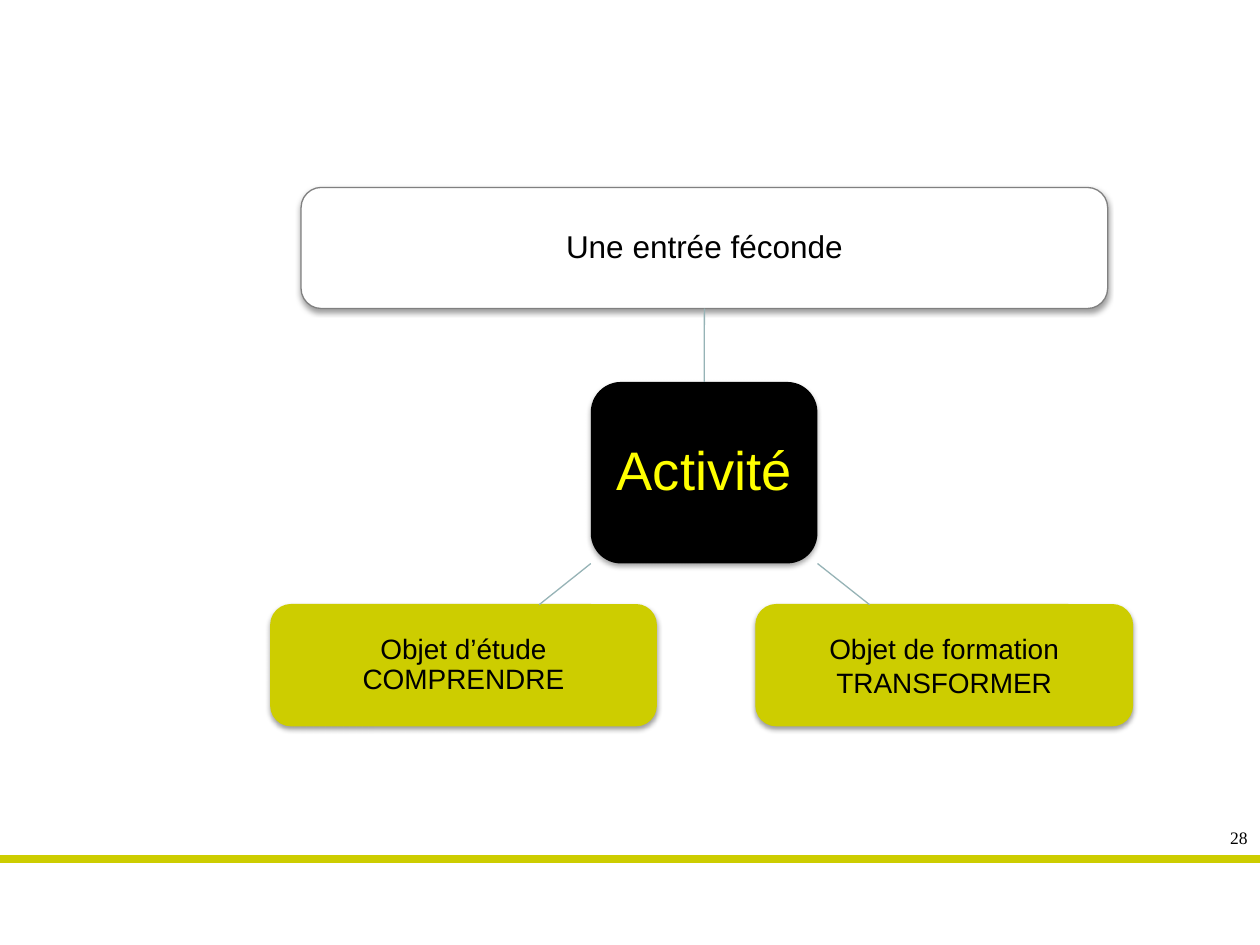
from lxml import etree
from pptx import Presentation
from pptx.dml.color import RGBColor as Rgb
from pptx.enum.shapes import MSO_CONNECTOR as Link, MSO_SHAPE as Shape
from pptx.enum.text import MSO_ANCHOR as Anchor, PP_ALIGN as Align
from pptx.oxml import parse_xml
from pptx.oxml.ns import nsdecls, qn
from pptx.util import Cm, Pt

hues = {"lime": "CDCD00", "black": "000000", "white": "FFFFFF",
        "yellow": "FFFF00", "grey": "808080", "link": "96B3B6"}
hues = {name: Rgb.from_string(code) for name, code in hues.items()}

deck = Presentation()
deck.slide_width, deck.slide_height = Cm(25.4), Cm(19.05)
slide = deck.slides.add_slide(deck.slide_layouts[6])


def join(start, end, hue, width):
    line = slide.shapes.add_connector(Link.STRAIGHT, *map(Cm, start + end))
    line.line.color.rgb = hues[hue]
    line.line.width = Pt(width)
    etree.SubElement(line._element.spPr, qn("a:effectLst"))
    return line


# Footer rule and page number
join((25.4, 17.32), (0, 17.32), "lime", 4.5)
page = slide.shapes.add_textbox(Cm(24.1), Cm(16.54), Cm(1.3), Cm(0.69))
page.text_frame.word_wrap = True
para = page.text_frame.paragraphs[0]
para.text = "28"
para.alignment = Align.RIGHT
para.font.size, para.font.name = Pt(10), "Times New Roman"
para.font.color.rgb = hues["black"]

# Boxes: text, place, fill, line, font colour, size, line spacing, shadow opacity
boxes = [
    ("Activité", (11.91, 7.7, 4.57, 3.66), "black", None, "yellow", 31, 0.9, 35),
    ("Une entrée féconde", (6.07, 3.78, 16.26, 2.44), "white", "grey", "black", 18, 0.9, 38),
    ("Objet de formation\nTRANSFORMER", (15.24, 12.19, 7.59, 2.44), "lime", "lime", "black", 16, 1.0, 38),
    ("Objet d’étude\nCOMPRENDRE", (5.46, 12.19, 7.77, 2.44), "lime", "lime", "black", 16, 0.9, 38),
]
made = []
for text, place, fill, edge, ink, size, space, alpha in boxes:
    box = slide.shapes.add_shape(Shape.ROUNDED_RECTANGLE, *map(Cm, place))
    box.fill.solid()
    box.fill.fore_color.rgb = hues[fill]
    if edge:
        box.line.color.rgb = hues[edge]
        box.line.width = Pt(0.75)
    else:
        box.line.fill.background()

    # Soft shadow below the box
    box._element.spPr.append(parse_xml(
        f'<a:effectLst {nsdecls("a")}><a:outerShdw blurRad="{Pt(3.1)}" dist="{Pt(1.7)}" '
        f'dir="5400000" rotWithShape="0"><a:srgbClr val="000000"><a:alpha val="{alpha}000"/>'
        '</a:srgbClr></a:outerShdw></a:effectLst>'))

    frame = box.text_frame
    frame.word_wrap = True
    frame.vertical_anchor = Anchor.MIDDLE
    frame.margin_left = frame.margin_right = Cm(0.23)
    frame.margin_top = frame.margin_bottom = Cm(0.23)
    para = frame.paragraphs[0]
    para.text = text
    para.alignment = Align.CENTER
    para.line_spacing = space
    for run in para.runs:
        run.font.size, run.font.name = Pt(size), "Arial"
        run.font.color.rgb = hues[ink]
    made.append(box)

# Links from the centre box
core, top = made[:2]
stem = join((14.2, 7.7), (14.2, 6.22), "link", 0.75)
stem.begin_connect(core, 0)
stem.end_connect(top, 2)
join((16.48, 11.36), (17.53, 12.19), "link", 0.75)
join((11.91, 11.36), (10.87, 12.19), "link", 0.75)

deck.save("out.pptx")
